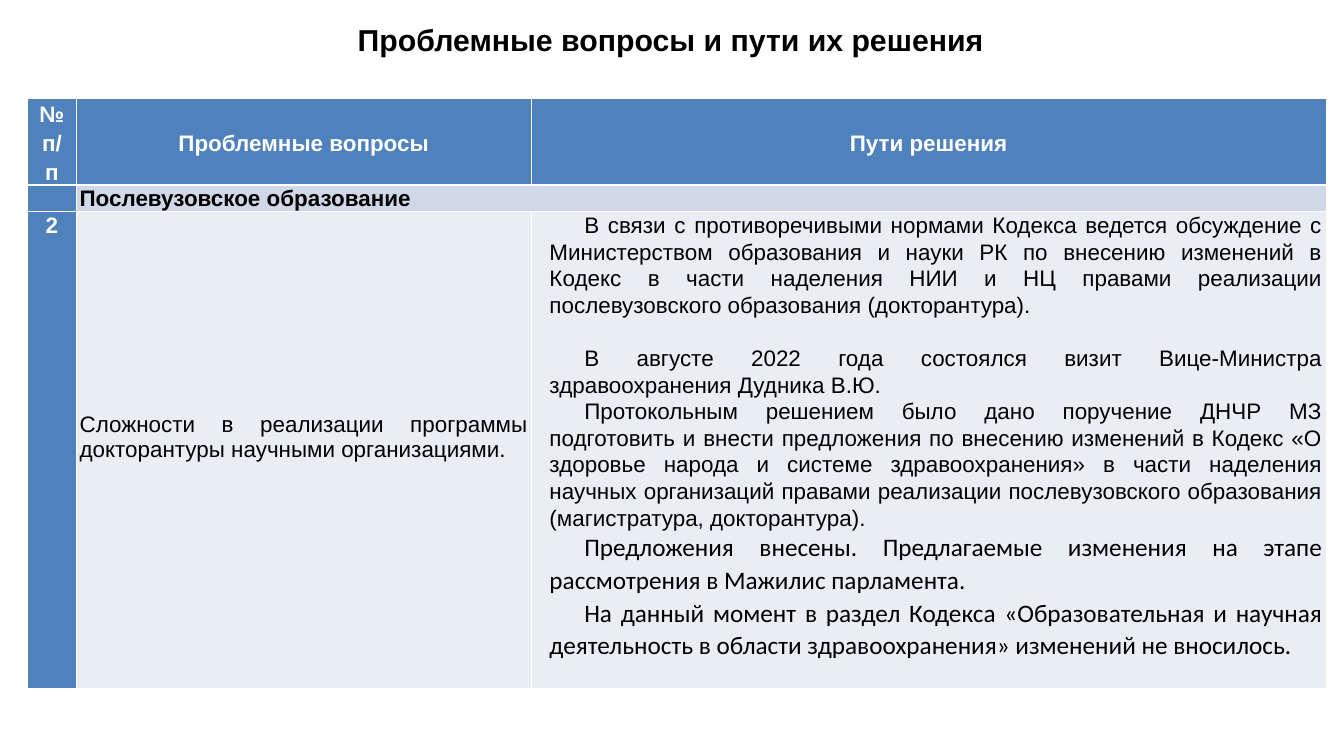
from lxml import etree
from pptx import Presentation
from pptx.dml import color
from pptx.enum import text
from pptx.oxml import ns
from pptx.util import Inches, Pt

HUES = {"head": "4F81BD", "band": "D0D8E8", "body": "E9EDF4",
        "white": "FFFFFF", "black": "000000"}
LEFT, MID, BOTH = text.PP_ALIGN.LEFT, text.PP_ALIGN.CENTER, text.PP_ALIGN.JUSTIFY
TOP, CORE = text.MSO_ANCHOR.TOP, text.MSO_ANCHOR.MIDDLE


class Deck:
    """Style and current slide."""
    font, size = "Arial", 32

    def __init__(self, wide, high):
        self.prs = Presentation()
        self.prs.slide_width, self.prs.slide_height = Inches(wide), Inches(high)
        self.slide = self.prs.slides.add_slide(self.prs.slide_layouts[5])

    def run(self, par, words, hue="black", bold=False, size=None, font=None):
        run = par.add_run()
        run.text = words
        run.font.size = Pt(size or self.size)
        run.font.name = font or self.font
        run.font.bold = bold
        run.font.color.rgb = color.RGBColor.from_string(HUES[hue])

    def title(self, words, left, top, wide, high):
        box = self.slide.shapes.title
        box.left, box.top = Inches(left), Inches(top)
        box.width, box.height = Inches(wide), Inches(high)
        box.text_frame.vertical_anchor = CORE
        par = box.text_frame.paragraphs[0]
        par.alignment = MID
        self.run(par, words, bold=True, size=43.2)

    def table(self, left, top, cols, rows):
        grid = self.slide.shapes.add_table(
            len(rows), len(cols), Inches(left), Inches(top),
            Inches(sum(cols)), Inches(sum(rows))).table
        for col, wide in zip(grid.columns, cols):
            col.width = Inches(wide)
        for row, high in zip(grid.rows, rows):
            row.height = Inches(high)
        return grid

    def cell(self, cell, fill, under=1, over=1, side=0.07, foot=0, anchor=TOP):
        cell.margin_left = cell.margin_right = Inches(side)
        cell.margin_top, cell.margin_bottom = 0, Inches(foot)
        cell.vertical_anchor = anchor
        cell.fill.solid()
        cell.fill.fore_color.rgb = color.RGBColor.from_string(HUES[fill])
        # Borders come before the fill in the cell properties
        props = cell.fill._xPr
        edges = {"a:lnL": 1, "a:lnR": 1, "a:lnT": over, "a:lnB": under}
        for spot, (tag, width) in enumerate(edges.items()):
            line = etree.Element(ns.qn(tag), w=str(Pt(width)))
            paint = etree.SubElement(line, ns.qn("a:solidFill"))
            etree.SubElement(paint, ns.qn("a:srgbClr"), val=HUES["white"])
            props.insert(spot, line)

    def para(self, cell, words, align, pitch=1.06, before=0, after=0,
             indent=None, **look):
        frame = cell.text_frame
        par = frame.paragraphs[0]
        if par.runs:
            par = frame.add_paragraph()
        par.alignment, par.line_spacing = align, pitch
        par.space_before, par.space_after = Pt(before), Pt(after)
        if indent:
            props = par._p.get_or_add_pPr()
            for key, gap in zip(("marL", "indent"), indent):
                props.set(key, str(Inches(gap)))
        self.run(par, words, **look)


def main():
    deck = Deck(26.66, 15)
    deck.title("Проблемные вопросы и пути их решения", 1.81, 0.39, 22.99, 0.79)
    grid = deck.table(0.55, 1.95, [0.96, 9.03, 15.76], [1.72, 0.53, 9.46])

    # Header row
    for col, words in enumerate(["№ п/п", "Проблемные вопросы", "Пути решения"]):
        cell = grid.cell(0, col)
        deck.cell(cell, "head", under=3, side=0.15, anchor=CORE)
        deck.para(cell, words, MID, 1.15, after=10, hue="white", bold=True)

    # Section row
    grid.cell(1, 1).merge(grid.cell(1, 2))
    for col, fill in enumerate(["head", "band", "band"]):
        deck.cell(grid.cell(1, col), fill, over=3)
    deck.para(grid.cell(1, 1), "Послевузовское образование", BOTH, bold=True)

    # Number and problem
    num, issue, ways = (grid.cell(2, col) for col in range(3))
    deck.cell(num, "head")
    deck.para(num, "2", MID, hue="white", bold=True)
    deck.cell(issue, "body", foot=0.5, anchor=CORE)
    deck.para(issue, "Сложности в реализации программы докторантуры "
              "научными организациями.", BOTH, 1.0)

    # Ways to solve it
    deck.cell(ways, "body")
    late = {"size": 36, "font": "Calibri"}
    steps = [
        ("В связи с противоречивыми нормами Кодекса ведется обсуждение с "
         "Министерством образования и науки РК по внесению изменений в Кодекс "
         "в части наделения НИИ и НЦ правами реализации послевузовского "
         "образования (докторантура).", {}),
        ("В августе 2022 года состоялся визит Вице-Министра здравоохранения "
         "Дудника В.Ю.", {"before": 38}),
        ("Протокольным решением было дано поручение ДНЧР МЗ подготовить и "
         "внести предложения по внесению изменений в Кодекс «О здоровье народа "
         "и системе здравоохранения» в части наделения научных организаций "
         "правами реализации послевузовского образования (магистратура, "
         "докторантура).", {}),
        ("Предложения внесены. Предлагаемые изменения на этапе рассмотрения "
         "в Мажилис парламента.", late),
        ("На данный момент в раздел Кодекса «Образовательная и научная "
         "деятельность в области здравоохранения» изменений не вносилось.", late),
    ]
    for words, look in steps:
        deck.para(ways, words, BOTH, indent=(0.29, 0.69), **look)

    deck.prs.save("out.pptx")


if __name__ == "__main__":
    main()
